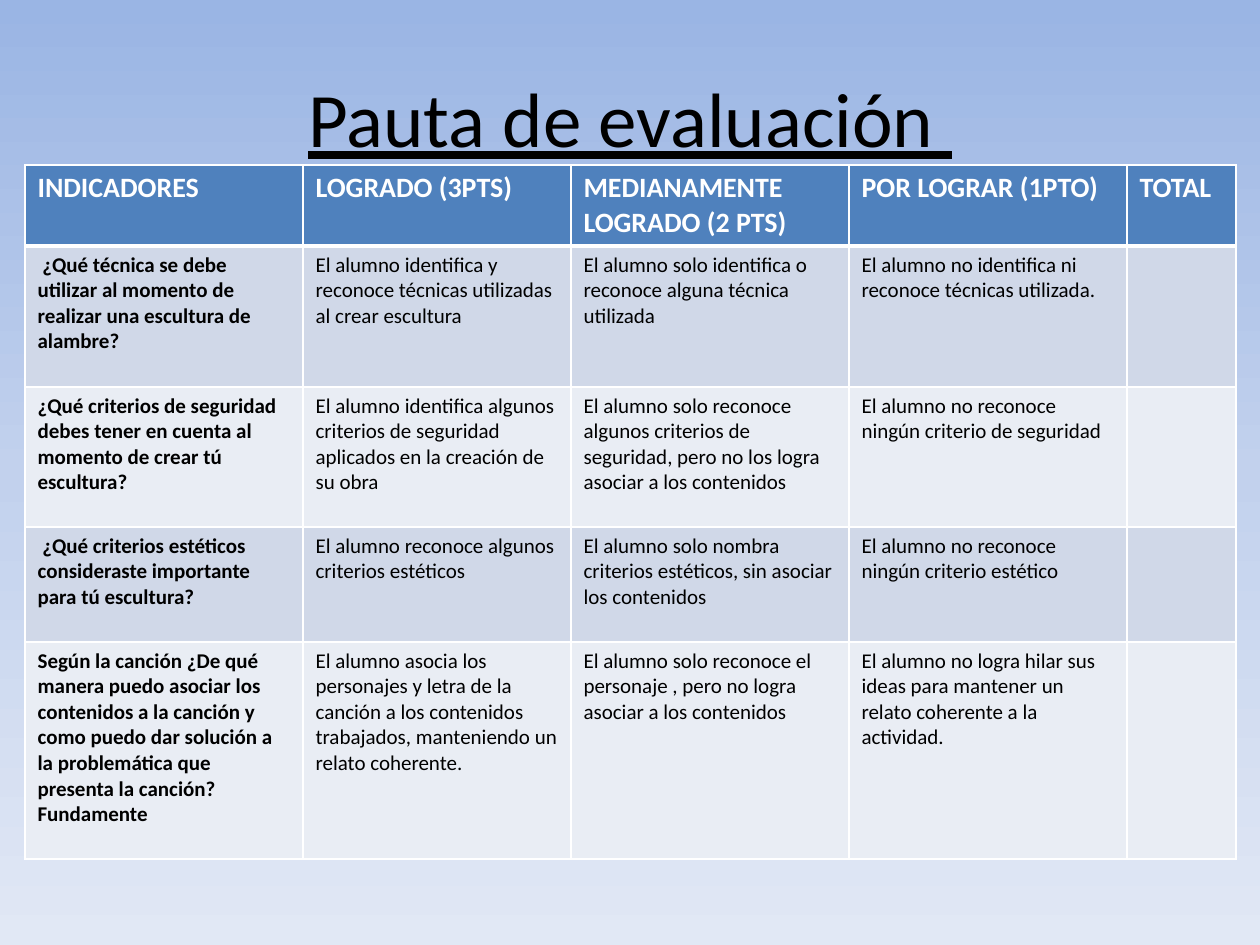
import copy

import pptx
import pptx.dml.color
import pptx.enum.text
import pptx.oxml
import pptx.oxml.ns
import pptx.util

RGBColor = pptx.dml.color.RGBColor
BLACK = RGBColor(0x00, 0x00, 0x00)
WHITE = RGBColor(0xFF, 0xFF, 0xFF)
HEADER_BLUE = RGBColor(0x4F, 0x81, 0xBD)
BANDS = (RGBColor(0xD0, 0xD8, 0xE8), RGBColor(0xE9, 0xED, 0xF4))
SKY = (
    (0, RGBColor(0x9A, 0xB5, 0xE4)),
    (0.5, RGBColor(0xC2, 0xD1, 0xED)),
    (1, RGBColor(0xE1, 0xE8, 0xF5)),
)

RUBRIC = (
    ("INDICADORES", "LOGRADO (3PTS)", "MEDIANAMENTE LOGRADO (2 PTS)",
     "POR LOGRAR (1PTO)", "TOTAL"),
    (" ¿Qué técnica se debe utilizar al momento de realizar una escultura de alambre?",
     "El alumno identifica y reconoce técnicas utilizadas al crear escultura",
     "El alumno solo identifica o reconoce alguna técnica utilizada",
     "El alumno no identifica ni reconoce técnicas utilizada.", ""),
    ("¿Qué criterios de seguridad debes tener en cuenta al momento de crear tú escultura?",
     "El alumno identifica algunos criterios de seguridad aplicados en la creación de su obra",
     "El alumno solo reconoce algunos criterios de seguridad, pero no los logra "
     "asociar a los contenidos",
     "El alumno no reconoce ningún criterio de seguridad", ""),
    (" ¿Qué criterios estéticos consideraste importante para tú escultura?",
     "El alumno reconoce algunos criterios estéticos",
     "El alumno solo nombra criterios estéticos, sin asociar los contenidos",
     "El alumno no reconoce ningún criterio estético", ""),
    ("Según la canción ¿De qué manera puedo asociar los contenidos a la canción y como "
     "puedo dar solución a la problemática que presenta la canción? Fundamente",
     "El alumno asocia los personajes y letra de la canción a los contenidos trabajados, "
     "manteniendo un relato coherente.",
     "El alumno solo reconoce el personaje , pero no logra asociar a los contenidos",
     "El alumno no logra hilar sus ideas para mantener un relato coherente a la actividad.",
     ""),
)
COLUMN_WIDTHS = (278, 268, 278, 278, 109)
ROW_HEIGHTS = (81, 141, 140, 115, 217)


def px(length):
    return pptx.util.Emu(round(length * 914400 / 126))


class SlideBuilder:
    font_name = "Calibri"

    def __init__(self, slide):
        self.slide = slide

    def background(self, stops):
        """Fill the background with a gradient running from top to bottom."""
        fill = self.slide.background.fill
        fill.gradient()
        fill.gradient_angle = 270
        stop_list = self.slide.element.find(".//" + pptx.oxml.ns.qn("a:gsLst"))
        while len(stop_list) < len(stops):
            stop_list.append(copy.deepcopy(stop_list[0]))
        for stop, (position, color) in zip(fill.gradient_stops, stops):
            stop.position = position
            stop.color.rgb = color

    def style(self, paragraph, size, color, bold=False, underline=False):
        for run in paragraph.runs:
            font = run.font
            font.name = self.font_name
            font.size = pptx.util.Pt(size)
            font.bold = bold
            font.underline = underline
            font.color.rgb = color

    def title(self, text, left, top, width, height):
        box = self.slide.shapes.add_textbox(px(left), px(top), px(width), px(height))
        frame = box.text_frame
        frame.word_wrap = True
        frame.vertical_anchor = pptx.enum.text.MSO_ANCHOR.MIDDLE
        frame.text = text
        heading = frame.paragraphs[0]
        heading.alignment = pptx.enum.text.PP_ALIGN.CENTER
        self.style(heading, 44, BLACK, underline=True)

    def border(self, cell, side, points):
        line = pptx.oxml.parse_xml(
            f'<a:ln{side} {pptx.oxml.ns.nsdecls("a")} w="{pptx.util.Pt(points)}">'
            f'<a:solidFill><a:srgbClr val="{WHITE}"/></a:solidFill></a:ln{side}>'
        )
        cell._tc.get_or_add_tcPr().append(line)

    def table(self, rows, left, top, widths, heights):
        frame = self.slide.shapes.add_table(
            len(rows), len(widths), px(left), px(top), px(sum(widths)), px(sum(heights))
        )
        grid = frame.table
        for column, width in zip(grid.columns, widths):
            column.width = px(width)
        for row, height in zip(grid.rows, heights):
            row.height = px(height)
        for r, texts in enumerate(rows):
            for c, text in enumerate(texts):
                self.cell(grid.cell(r, c), text, r, c)

    def cell(self, cell, text, row, column):
        is_header = row == 0
        for side in "LRTB":
            under_header = (row, side) in ((0, "B"), (1, "T"))
            self.border(cell, side, 3 if under_header else 1)
        cell.fill.solid()
        cell.fill.fore_color.rgb = HEADER_BLUE if is_header else BANDS[(row - 1) % 2]
        cell.text_frame.text = text
        self.style(
            cell.text_frame.paragraphs[0],
            16 if is_header else 12,
            WHITE if is_header else BLACK,
            bold=is_header or column == 0,
        )


def main():
    presentation = pptx.Presentation()
    presentation.slide_width = px(1260)
    presentation.slide_height = px(945)
    builder = SlideBuilder(presentation.slides.add_slide(presentation.slide_layouts[6]))
    builder.background(SKY)
    builder.title("Pauta de evaluación ", 63, 38, 1134, 157)
    builder.table(RUBRIC, 25, 165, COLUMN_WIDTHS, ROW_HEIGHTS)
    presentation.save("out.pptx")


if __name__ == "__main__":
    main()
